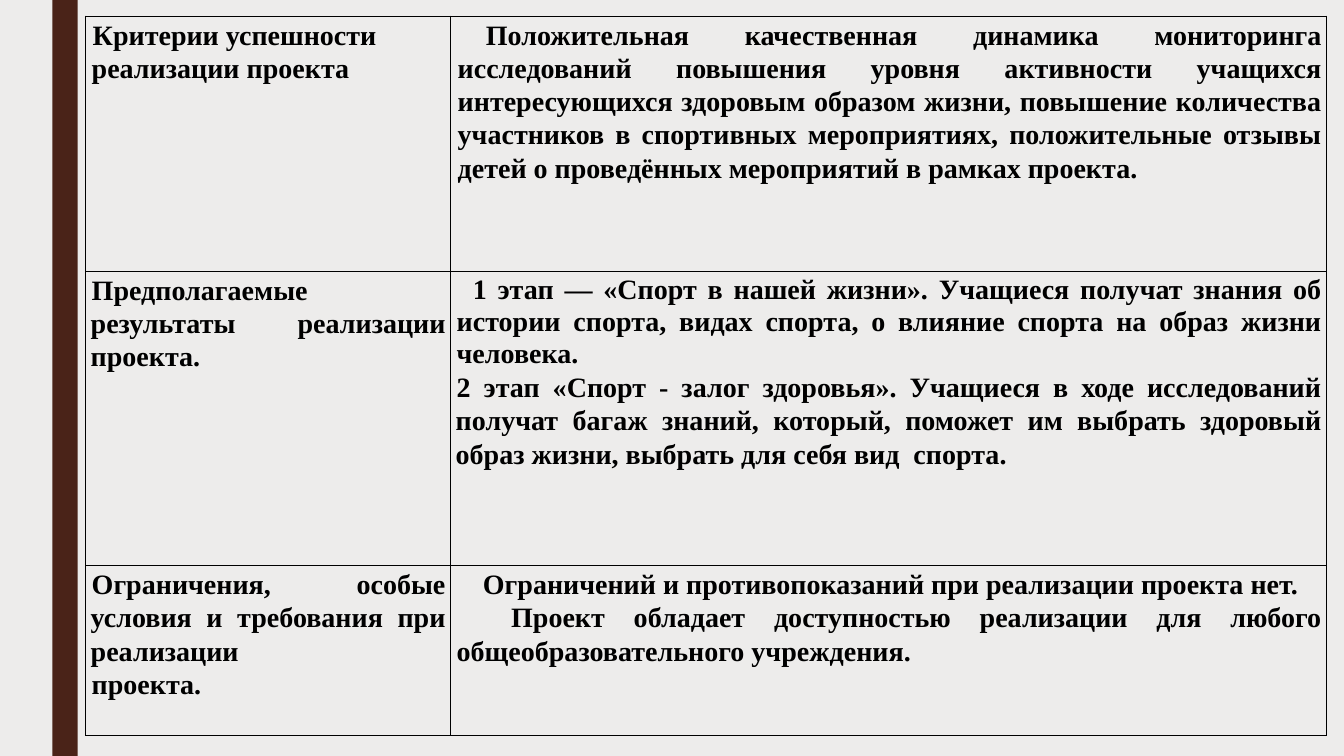
from lxml.etree import SubElement
from pptx import Presentation
from pptx.dml.color import RGBColor
from pptx.enum.shapes import MSO_SHAPE as SHAPE
from pptx.enum.text import PP_ALIGN as ALIGN
from pptx.oxml.ns import qn
from pptx.util import Inches, Pt

THEME = {
    "background": RGBColor.from_string("EDECEB"),
    "bar": RGBColor.from_string("4A2318"),
    "text": RGBColor.from_string("000000"),
    "border": "000000",
    "border_width": Pt(1),
    "font": "Times New Roman",
    "size": Pt(20),
}

BODY = {"align": ALIGN.JUSTIFY, "left": 0, "first": 0.01, "spacing": 1.07, "after": 0}
HEADING = BODY | {"align": ALIGN.LEFT, "left": 0.01}
CRITERIA = BODY | {"left": 0.02, "first": 0.28}
STAGE_ONE = BODY | {"left": 0.01, "first": 0.16, "spacing": 1.03, "after": 1}
LIMITS = BODY | {"left": 0.01, "first": 0.26}
ACCESS = LIMITS | {"first": 0.54}

ROWS = [
    (
        [("Критерии успешности реализации проекта", HEADING)],
        [("Положительная качественная динамика мониторинга исследований повышения "
          "уровня активности учащихся интересующихся здоровым образом жизни, повышение "
          "количества участников в спортивных мероприятиях, положительные отзывы детей "
          "о проведённых мероприятий в рамках проекта.", CRITERIA)],
    ),
    (
        [("Предполагаемые результаты реализации проекта.", BODY)],
        [("1 этап — «Спорт в нашей жизни». Учащиеся получат знания об истории спорта, "
          "видах спорта, о влияние спорта на образ жизни человека.", STAGE_ONE),
         ("2 этап «Спорт - залог здоровья». Учащиеся в ходе исследований получат багаж "
          "знаний, который, поможет им выбрать здоровый образ жизни, выбрать для себя "
          "вид  спорта.", BODY)],
    ),
    (
        [("Ограничения, особые условия и требования при реализации", BODY),
         ("проекта.", BODY)],
        [("Ограничений и противопоказаний при реализации проекта нет.", LIMITS),
         ("Проект обладает доступностью реализации для любого общеобразовательного "
          "учреждения.", ACCESS)],
    ),
]

COLUMN_WIDTHS = [3.62, 8.69]
ROW_HEIGHTS = [2.53, 2.92, 1.69]
TABLE_LEFT, TABLE_TOP = 0.85, 0.16
CELL_MARGINS = {"margin_left": 0.05, "margin_top": 0.02, "margin_right": 0.05, "margin_bottom": 0}


def add_bar(slide, height):
    s = slide.shapes.add_shape(SHAPE.RECTANGLE, Inches(0.52), 0, Inches(0.25), height)
    s.shadow.inherit = False
    s.fill.solid()
    s.fill.fore_color.rgb = THEME["bar"]
    s.line.fill.background()


def add_borders(cell):
    tc_pr = cell._tc.get_or_add_tcPr()
    for index, side in enumerate(("lnL", "lnR", "lnT", "lnB")):
        line = SubElement(tc_pr, qn(f"a:{side}"), w=str(THEME["border_width"]))
        fill = SubElement(line, qn("a:solidFill"))
        SubElement(fill, qn("a:srgbClr"), val=THEME["border"])
        tc_pr.insert(index, line)


def write_paragraph(p, text, style):
    formats = {
        "alignment": style["align"],
        "line_spacing": style["spacing"],
        "space_before": Pt(0),
        "space_after": Pt(style["after"]),
    }
    for name, value in formats.items():
        setattr(p, name, value)
    p_pr = p._p.get_or_add_pPr()
    p_pr.set("marL", str(Inches(style["left"])))
    p_pr.set("indent", str(Inches(style["first"])))
    r = p.add_run()
    r.text = text
    for name, value in {"name": THEME["font"], "size": THEME["size"], "bold": True}.items():
        setattr(r.font, name, value)
    r.font.color.rgb = THEME["text"]


def fill_cell(cell, paragraphs):
    for name, value in CELL_MARGINS.items():
        setattr(cell, name, Inches(value))
    cell.fill.background()
    add_borders(cell)
    tf = cell.text_frame
    for index, (text, style) in enumerate(paragraphs):
        p = tf.add_paragraph() if index else tf.paragraphs[0]
        write_paragraph(p, text, style)


def add_project_table(slide):
    table = slide.shapes.add_table(
        len(ROWS), len(COLUMN_WIDTHS), Inches(TABLE_LEFT), Inches(TABLE_TOP),
        Inches(sum(COLUMN_WIDTHS)), Inches(sum(ROW_HEIGHTS)),
    ).table
    table.first_row = table.horz_banding = False
    for column, width in zip(table.columns, COLUMN_WIDTHS):
        column.width = Inches(width)
    for row, height, contents in zip(table.rows, ROW_HEIGHTS, ROWS):
        row.height = Inches(height)
        for cell, paragraphs in zip(row.cells, contents):
            fill_cell(cell, paragraphs)


def main():
    prs = Presentation()
    prs.slide_width, prs.slide_height = Inches(13.33), Inches(7.5)
    slide = prs.slides.add_slide(prs.slide_layouts[6])
    slide.background.fill.solid()
    slide.background.fill.fore_color.rgb = THEME["background"]
    add_bar(slide, prs.slide_height)
    add_project_table(slide)
    prs.save("out.pptx")


if __name__ == "__main__":
    main()
